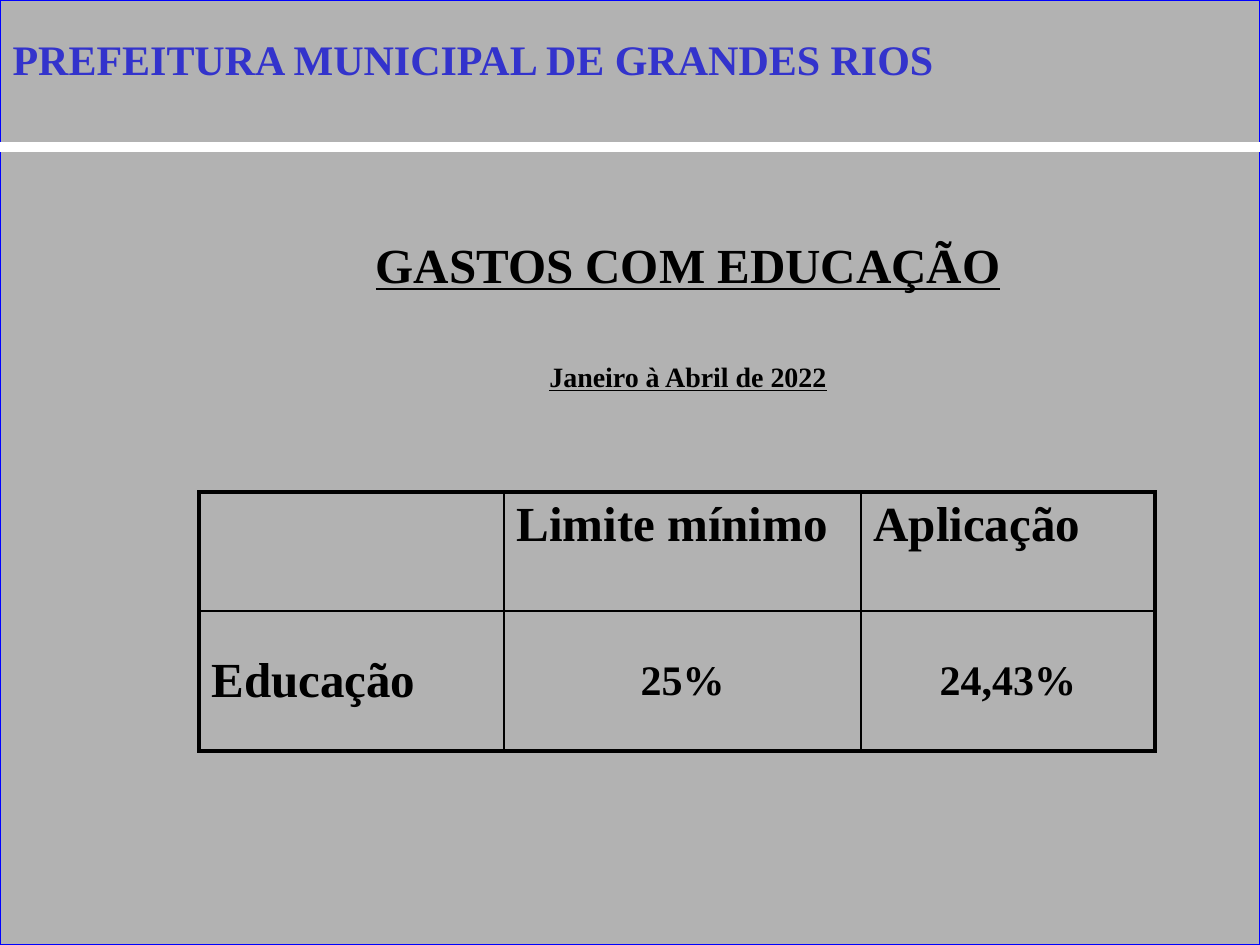
from dataclasses import dataclass

from lxml import etree
from pptx import Presentation
from pptx.dml.color import RGBColor
from pptx.enum.shapes import MSO_CONNECTOR, MSO_SHAPE
from pptx.enum.text import MSO_ANCHOR, MSO_AUTO_SIZE, PP_ALIGN
from pptx.oxml import parse_xml
from pptx.oxml.ns import nsdecls, qn
from pptx.util import Emu, Pt

LEFT, CENTER = PP_ALIGN.LEFT, PP_ALIGN.CENTER
TOP, MIDDLE = MSO_ANCHOR.TOP, MSO_ANCHOR.MIDDLE
RECTANGLE, STRAIGHT = MSO_SHAPE.RECTANGLE, MSO_CONNECTOR.STRAIGHT
TITLE_ONLY = 5
PAGE_WIDTH, PAGE_HEIGHT = 1260, 945


@dataclass(frozen=True)
class Theme:
    font: str = "Times New Roman"
    panel: str = "B2B2B2"
    frame: str = "0000FF"
    rule: str = "FFFFFF"
    title: str = "3333CC"
    title_shadow: str = "808080"
    ink: str = "000000"
    heading_size: int = 28
    title_size: int = 24
    period_size: int = 16
    outer_border: float = 2.25
    inner_border: float = 1


def px(length):
    return Emu(round(length * 914400 / 126))


class SlideBuilder:
    def __init__(self, page, theme):
        self.page = page
        self.theme = theme

    def style(self, para, size, color=None, align=LEFT, underline=None):
        para.alignment = align
        for span in para.runs:
            font = span.font
            font.name, font.size, font.bold = self.theme.font, Pt(size), True
            font.underline = underline
            font.color.rgb = RGBColor.from_string(color or self.theme.ink)

    def panel(self, left, top, width, height):
        shape = self.page.shapes.add_shape(RECTANGLE, px(left), px(top), px(width), px(height))
        shape.shadow.inherit = False
        shape.fill.solid()
        shape.fill.fore_color.rgb = RGBColor.from_string(self.theme.panel)
        shape.line.color.rgb = RGBColor.from_string(self.theme.frame)
        shape.line.width = Pt(0.75)

    def rule(self, left, right, y, weight):
        line = self.page.shapes.add_connector(STRAIGHT, px(left), px(y), px(right), px(y))
        line.line.color.rgb = RGBColor.from_string(self.theme.rule)
        line.line.width = Pt(weight)
        etree.SubElement(line._element.spPr, qn("a:effectLst"))

    def title(self, text, left, top, width, height):
        """Fill the title placeholder and bring it in front of the panel."""
        box = self.page.shapes.title
        box.left, box.top, box.width, box.height = px(left), px(top), px(width), px(height)
        frame = box.text_frame
        frame.text = text
        frame.auto_size = MSO_AUTO_SIZE.NONE
        frame.vertical_anchor = MIDDLE
        para = frame.paragraphs[0]
        para.runs[0]._r.get_or_add_rPr().append(parse_xml(
            f'<a:effectLst {nsdecls("a")}><a:outerShdw dist="35921" dir="2700000">'
            f'<a:srgbClr val="{self.theme.title_shadow}"/></a:outerShdw></a:effectLst>'))
        self.style(para, self.theme.title_size, self.theme.title)
        self.page.shapes._spTree.append(box._element)

    def headings(self, lines, left, top, width, height, gap):
        """Stack centred, underlined (text, size) lines with a gap in points."""
        box = self.page.shapes.add_textbox(px(left), px(top), px(width), px(height))
        frame = box.text_frame
        frame.word_wrap = True
        frame.text = "\n".join(text for text, _ in lines)
        for index, (para, (_, size)) in enumerate(zip(frame.paragraphs, lines)):
            para.line_spacing = 1.5
            para.space_before = Pt(gap if index else 0)
            self.style(para, size, align=CENTER, underline=True)

    def border(self, cell, side, weight):
        cell._tc.get_or_add_tcPr().append(parse_xml(
            f'<a:ln{side} {nsdecls("a")} w="{Pt(weight)}"><a:solidFill>'
            f'<a:srgbClr val="{self.theme.ink}"/></a:solidFill></a:ln{side}>'))

    def table(self, rows, left, top, widths, heights):
        theme = self.theme
        table = self.page.shapes.add_table(
            len(rows), len(widths), px(left), px(top), px(sum(widths)), px(sum(heights))).table
        table.first_row = table.horz_banding = False
        for column, width in zip(table.columns, widths):
            column.width = px(width)
        for row, height in zip(table.rows, heights):
            row.height = px(height)
        last_row, last_column = len(rows) - 1, len(widths) - 1
        for r, texts in enumerate(rows):
            for c, text in enumerate(texts):
                cell = table.cell(r, c)
                cell.text = text
                is_value = r > 0 and c > 0
                self.style(cell.text_frame.paragraphs[0],
                           theme.title_size if is_value else theme.heading_size,
                           align=CENTER if is_value else LEFT)
                cell.vertical_anchor = MIDDLE if r else TOP
                edges = {"L": c == 0, "R": c == last_column, "T": r == 0, "B": r == last_row}
                for side, is_outer in edges.items():
                    self.border(cell, side, theme.outer_border if is_outer else theme.inner_border)
                cell.fill.background()


def main():
    theme = Theme()
    deck = Presentation()
    deck.slide_width, deck.slide_height = px(PAGE_WIDTH), px(PAGE_HEIGHT)
    builder = SlideBuilder(deck.slides.add_slide(deck.slide_layouts[TITLE_ONLY]), theme)

    builder.panel(0, 0, PAGE_WIDTH, PAGE_HEIGHT)
    builder.rule(0, PAGE_WIDTH, 147, 6)
    builder.headings([("GASTOS COM EDUCAÇÃO", theme.heading_size),
                      ("Janeiro à Abril de 2022", theme.period_size)],
                     179, 199, 1018, 789, gap=28)
    builder.table([["", "Limite mínimo", "Aplicação"],
                   ["Educação", "25%", "24,43%"]],
                  199, 492, widths=[305, 357, 294], heights=[119, 140])
    builder.title("PREFEITURA MUNICIPAL DE GRANDES RIOS", 0, 27, 1196, 63)
    deck.save("out.pptx")


if __name__ == "__main__":
    main()
